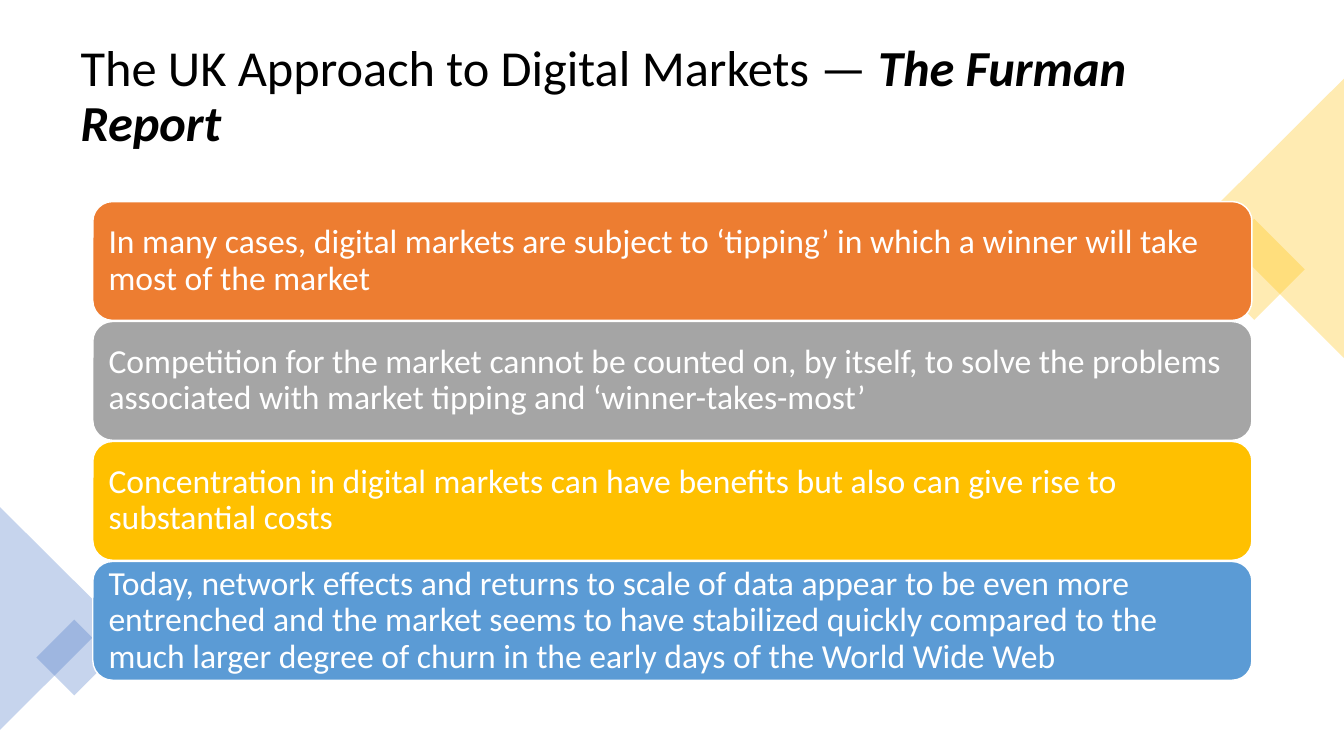
"""Build the slide on the UK approach to digital markets."""
import pptx
import pptx.util
import pptx.dml.color
import pptx.enum.shapes
import pptx.enum.text
import pptx.oxml.ns
import lxml.etree

Cm = pptx.util.Cm
Pt = pptx.util.Pt
RGBColor = pptx.dml.color.RGBColor
SHAPE = pptx.enum.shapes.MSO_SHAPE
MIDDLE = pptx.enum.text.MSO_ANCHOR.MIDDLE
LEFT = pptx.enum.text.PP_ALIGN.LEFT

BLACK = RGBColor(0x00, 0x00, 0x00)
WHITE = RGBColor(0xFF, 0xFF, 0xFF)
ORANGE = RGBColor(0xED, 0x7D, 0x31)
GRAY = RGBColor(0xA5, 0xA5, 0xA5)
GOLD = RGBColor(0xFF, 0xC0, 0x00)
SKY = RGBColor(0x5B, 0x9B, 0xD5)
BLUE = RGBColor(0x44, 0x72, 0xC4)

FONT = "Calibri"
WIDE, HIGH = 33.87, 19.05
POINTS = [
    (ORANGE, "In many cases, digital markets are subject to ‘tipping’ in which "
             "a winner will take most of the market"),
    (GRAY, "Competition for the market cannot be counted on, by itself, to solve "
           "the problems associated with market tipping and ‘winner-takes-most’"),
    (GOLD, "Concentration in digital markets can have benefits but also can give "
           "rise to substantial costs"),
    (SKY, "Today, network effects and returns to scale of data appear to be even "
          "more entrenched and the market seems to have stabilized quickly compared "
          "to the much larger degree of churn in the early days of the World Wide Web"),
]


def add_run(para, text, size, color, strong=False):
    run = para.add_run()
    run.text = text
    run.font.name = FONT
    run.font.size = Pt(size)
    run.font.color.rgb = color
    if strong:
        run.font.bold = run.font.italic = True


def set_frame(frame):
    frame.word_wrap = True
    frame.vertical_anchor = MIDDLE
    para = frame.paragraphs[0]
    para.alignment = LEFT
    para.line_spacing = 0.9
    return para


def add_form(slide, kind, box, color):
    form = slide.shapes.add_shape(kind, *map(Cm, box))
    form.shadow.inherit = False
    form.fill.solid()
    form.fill.fore_color.rgb = color
    return form


def add_tint(slide, kind, mid, size, turn, color):
    (x, y), (wide, high) = mid, size
    form = add_form(slide, kind, (x - wide / 2, y - high / 2, wide, high), color)
    form.rotation = turn
    form.line.fill.background()
    tone = next(form.fill._xPr.iter(pptx.oxml.ns.qn("a:srgbClr")))
    lxml.etree.SubElement(tone, pptx.oxml.ns.qn("a:alpha"), val="30000")


def add_edge(slide, box, turn, color, spot, side):
    x, y, wide, high = box
    mid = (x + wide / 2, y + high / 2)
    add_tint(slide, SHAPE.RECTANGLE, (x + spot[0], y + spot[1]), (side, side), 45, color)
    add_tint(slide, SHAPE.ISOSCELES_TRIANGLE, mid, (high, wide), turn, color)


def add_title(slide, box):
    frame = slide.shapes.add_textbox(*map(Cm, box)).text_frame
    para = set_frame(frame)
    add_run(para, "The UK Approach to Digital Markets — ", 36, BLACK)
    add_run(para, "The Furman Report", 36, BLACK, strong=True)


def add_bands(slide, box, gap):
    x, y, wide, high = box
    step = (high + gap) / len(POINTS)
    for row, (color, text) in enumerate(POINTS):
        place = (x, y + row * step, wide, step - gap)
        band = add_form(slide, SHAPE.ROUNDED_RECTANGLE, place, color)
        band.line.color.rgb = WHITE
        band.line.width = Pt(1)
        frame = band.text_frame
        frame.margin_left = frame.margin_right = Cm(0.25)
        frame.margin_top = frame.margin_bottom = Cm(0)
        add_run(set_frame(frame), text, 24, WHITE)


def main():
    deck = pptx.Presentation()
    deck.slide_width, deck.slide_height = Cm(WIDE), Cm(HIGH)
    slide = deck.slides.add_slide(deck.slide_layouts[6])
    add_title(slide, (1.78, 0.89, 30.3, 3.15))
    add_edge(slide, (WIDE - 3.53, 1.98, 3.53, 7.04), 270, GOLD, (1.27, 4.81), 1.8)
    add_edge(slide, (0, 12.78, 2.82, 5.61), 90, BLUE, (1.87, 3.79), 1.35)
    add_bands(slide, (2.34, 5.08, 29.21, 12.06), 0.03)
    deck.save("out.pptx")


if __name__ == "__main__":
    main()
